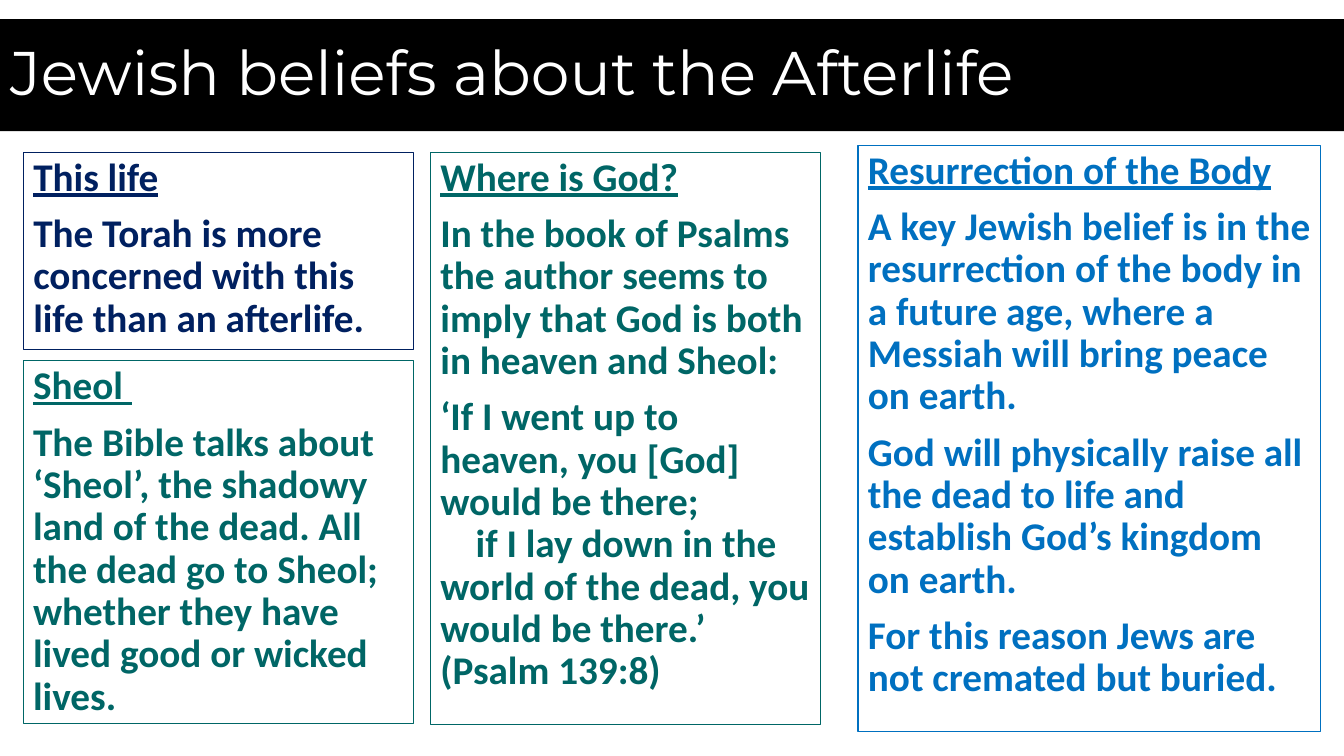
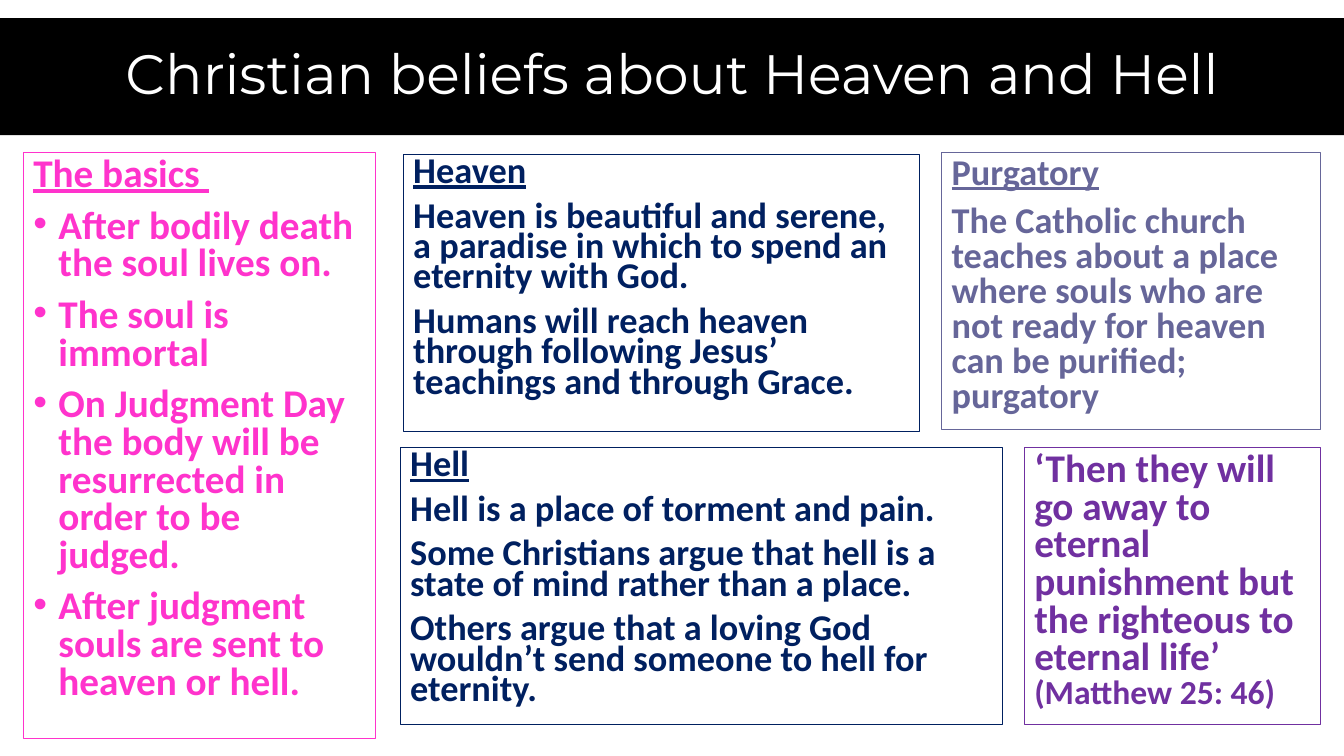
from lxml import etree
from pptx import Presentation
from pptx.dml.color import RGBColor
from pptx.enum.text import MSO_ANCHOR, MSO_AUTO_SIZE, PP_ALIGN
from pptx.oxml.ns import qn
from pptx.util import Pt

PX = 9144
LEFT, CENTER = PP_ALIGN.LEFT, PP_ALIGN.CENTER
MIDDLE, TOP = MSO_ANCHOR.MIDDLE, MSO_ANCHOR.TOP
NO_AUTOFIT = MSO_AUTO_SIZE.NONE
TITLE_FONT, BODY_FONT = "Montserrat", "Calibri"
CITATION_SIZE = 24
COLORS = {
    "black": "000000", "white": "FFFFFF", "navy": "002060",
    "teal": "006666", "blue": "0070C0", "pink": "FF33CC",
    "slate": "666699", "purple": "7030A0",
}
INDENTS = {"heading": (0, 0), "plain": (0, 0), "quote": (0, 0),
           "bullet": (25, -25), "verse": (0, 35)}

SLIDES = [
    {
        "title": "Jewish beliefs about the Afterlife",
        "band": (0, 19, 1333, 111), "size": 44, "align": LEFT,
        "panels": [
            ((23, 151, 387, 196), "navy", 28, 0.9, [
                ("heading", "This life"),
                ("plain", "The Torah is more concerned with this life than an afterlife."),
            ]),
            ((23, 358, 387, 360), "teal", 28, 0.9, [
                ("heading", "Sheol "),
                ("plain", "The Bible talks about ‘Sheol’, the shadowy land of the dead. "
                          "All the dead go to Sheol; whether they have lived good or wicked lives."),
            ]),
            ((427, 151, 387, 568), "teal", 28, 0.9, [
                ("heading", "Where is God?"),
                ("plain", "In the book of Psalms the author seems to imply that God is "
                          "both in heaven and Sheol:"),
                ("plain", "‘If I went up to heaven, you [God] would be there;"),
                ("verse", "if I lay down in the world of the dead, you would be there.’ "
                          "(Psalm 139:8)"),
            ]),
            ((851, 144, 459, 582), "blue", 28, 0.9, [
                ("heading", "Resurrection of the Body"),
                ("plain", "A key Jewish belief is in the resurrection of the body in a "
                          "future age, where a Messiah will bring peace on earth."),
                ("plain", "God will physically raise all the dead to life and establish "
                          "God’s kingdom on earth."),
                ("plain", "For this reason Jews are not cremated but buried."),
            ]),
        ],
    },
    {
        "title": "Christian beliefs about Heaven and Hell",
        "band": (0, 18, 1333, 116), "size": 39.6, "align": CENTER,
        "panels": [
            ((23, 151, 349, 582), "pink", 28, 0.8, [
                ("heading", "The basics "),
                ("bullet", "After bodily death the soul lives on."),
                ("bullet", "The soul is immortal"),
                ("bullet", "On Judgment Day the body will be resurrected in order to be judged."),
                ("bullet", "After judgment souls are sent to heaven or hell."),
            ]),
            ((400, 153, 512, 275), "navy", 25.9, 0.7, [
                ("heading", "Heaven"),
                ("plain", "Heaven is beautiful and serene, a paradise in which to spend "
                          "an eternity with God."),
                ("plain", "Humans will reach heaven through following Jesus’ teachings "
                          "and through Grace."),
            ]),
            ((397, 444, 597, 275), "navy", 25.9, 0.7, [
                ("heading", "Hell"),
                ("plain", "Hell is a place of torment and pain."),
                ("plain", "Some Christians argue that hell is a state of mind rather than a place."),
                ("plain", "Others argue that a loving God wouldn’t send someone to hell "
                          "for eternity."),
            ]),
            ((934, 151, 376, 275), "slate", 25.9, 0.8, [
                ("heading", "Purgatory"),
                ("plain", "The Catholic church teaches about a place where souls who are "
                          "not ready for heaven can be purified; purgatory"),
            ]),
            ((1016, 444, 294, 275), "purple", 28, 0.8, [
                ("quote", "‘Then they will go away to eternal punishment but the righteous "
                          "to eternal life’ ", "(Matthew 25: 46)"),
            ]),
        ],
    },
]


def prepare(shape, box, anchor):
    shape.left, shape.top, shape.width, shape.height = [value * PX for value in box]
    frame = shape.text_frame
    frame.word_wrap = True
    frame.auto_size = NO_AUTOFIT
    frame.vertical_anchor = anchor
    return frame


def add_run(paragraph, text, font_name, size, color):
    run = paragraph.add_run()
    run.text = text
    run.font.name = font_name
    run.font.size = Pt(size)
    run.font.color.rgb = RGBColor.from_string(COLORS[color])
    return run


presentation = Presentation()
presentation.slide_width = 1333 * PX
presentation.slide_height = 750 * PX

for content in SLIDES:
    slide = presentation.slides.add_slide(presentation.slide_layouts[1])
    title = slide.shapes.title
    title.fill.solid()
    title.fill.fore_color.rgb = RGBColor.from_string(COLORS["black"])
    paragraph = prepare(title, content["band"], MIDDLE).paragraphs[0]
    paragraph.alignment = content["align"]
    paragraph.line_spacing = 0.9
    add_run(paragraph, content["title"], TITLE_FONT, content["size"], "white")

    for number, (box, color, size, spacing, paragraphs) in enumerate(content["panels"]):
        if number == 0:
            panel = slide.placeholders[1]
        else:
            panel = slide.shapes.add_textbox(0, 0, PX, PX)
        frame = prepare(panel, box, TOP)
        panel.line.color.rgb = RGBColor.from_string(COLORS[color])
        panel.line.width = Pt(0.75)

        for index, (kind, *texts) in enumerate(paragraphs):
            paragraph = frame.add_paragraph() if index else frame.paragraphs[0]
            paragraph.alignment = LEFT
            paragraph.line_spacing = spacing
            paragraph.space_before = Pt(0 if kind == "verse" else 10)
            properties = paragraph._p.get_or_add_pPr()
            margin, indent = INDENTS[kind]
            properties.set("marL", str(margin * PX))
            properties.set("indent", str(indent * PX))
            if kind == "bullet":
                etree.SubElement(properties, qn("a:buFont"), typeface="Arial")
                etree.SubElement(properties, qn("a:buChar"), char="•")
            else:
                etree.SubElement(properties, qn("a:buNone"))
            for text, run_size in zip(texts, (size, CITATION_SIZE)):
                run = add_run(paragraph, text, BODY_FONT, run_size, color)
                run.font.bold = True
                run.font.underline = kind == "heading"

presentation.save("out.pptx")
